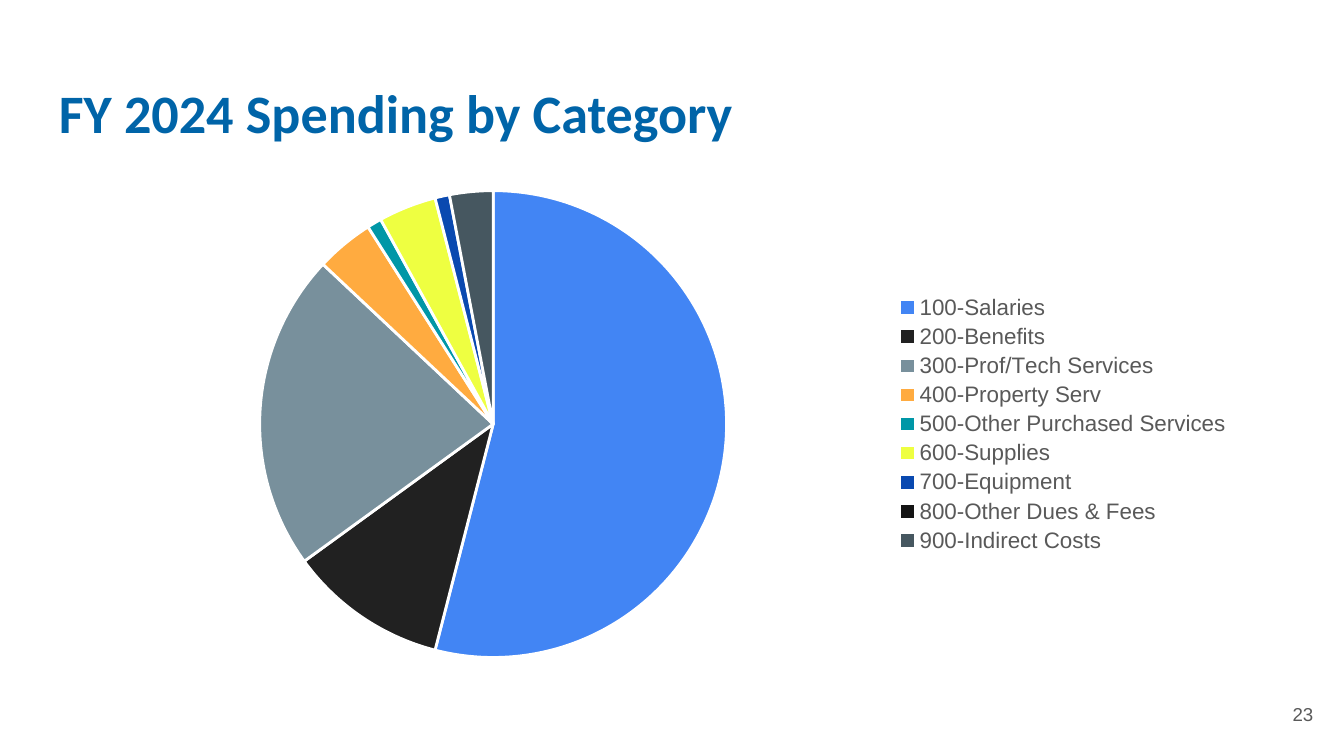
from pptx import Presentation
from pptx.chart.data import CategoryChartData
from pptx.dml.color import RGBColor
from pptx.enum.chart import XL_CHART_TYPE, XL_LEGEND_POSITION
from pptx.enum.text import MSO_ANCHOR, PP_ALIGN
from pptx.util import Pt

PIE = XL_CHART_TYPE.PIE
RIGHT = XL_LEGEND_POSITION.RIGHT
TOP, MIDDLE = MSO_ANCHOR.TOP, MSO_ANCHOR.MIDDLE
ALIGN_L, ALIGN_R = PP_ALIGN.LEFT, PP_ALIGN.RIGHT

BLUE = RGBColor(0x00, 0x64, 0xA8)
GREY = RGBColor(0x59, 0x59, 0x59)
WHITE = RGBColor(0xFF, 0xFF, 0xFF)
BLACK = RGBColor(0x00, 0x00, 0x00)

# Category, percent of spending, slice colour
SPENDING = [
    ("100-Salaries", 54, RGBColor(0x42, 0x85, 0xF4)),
    ("200-Benefits", 11, RGBColor(0x21, 0x21, 0x21)),
    ("300-Prof/Tech Services", 22, RGBColor(0x78, 0x90, 0x9C)),
    ("400-Property Serv", 4, RGBColor(0xFF, 0xAB, 0x40)),
    ("500-Other Purchased Services", 1, RGBColor(0x00, 0x97, 0xA7)),
    ("600-Supplies", 4, RGBColor(0xEE, 0xFF, 0x41)),
    ("700-Equipment", 1, RGBColor(0x0A, 0x49, 0xB0)),
    ("800-Other Dues & Fees", 0, RGBColor(0x14, 0x14, 0x14)),
    ("900-Indirect Costs", 3, RGBColor(0x46, 0x57, 0x60)),
]


def style(font, name, size, color, bold=False):
    font.name, font.size, font.bold = name, Pt(size), bold
    font.color.rgb = color


def add_text(slide, box, text, look, align=ALIGN_L, anchor=TOP):
    frame = slide.shapes.add_textbox(*map(Pt, box)).text_frame
    frame.word_wrap = True
    frame.vertical_anchor = anchor
    frame.margin_left = frame.margin_right = Pt(7.2)
    frame.margin_top = frame.margin_bottom = Pt(7.2)
    para = frame.paragraphs[0]
    para.alignment = align
    run = para.add_run()
    run.text = text
    style(run.font, *look)


def add_pie(slide, box):
    names, shares, colors = zip(*SPENDING)
    data = CategoryChartData()
    data.categories = names
    data.add_series("Series 1", shares)
    chart = slide.shapes.add_chart(PIE, *map(Pt, box), data).chart
    style(chart.font, "Arial", 10, BLACK)
    chart.has_title = False
    chart.has_legend = True
    chart.legend.position = RIGHT
    chart.legend.include_in_layout = False
    style(chart.legend.font, "Arial", 12, GREY)
    plot = chart.plots[0]
    plot.vary_by_categories = True
    for i, color in enumerate(colors):
        part = plot.series[0].points[i].format
        part.fill.solid()
        part.fill.fore_color.rgb = color
        part.line.color.rgb = WHITE
        part.line.width = Pt(1.5)


def main():
    deck = Presentation()
    deck.slide_width, deck.slide_height = Pt(720), Pt(405)
    slide = deck.slides.add_slide(deck.slide_layouts[6])
    add_text(slide, (24.5, 35.3, 671, 45.4), "FY 2024 Spending by Category",
             ("Calibri", 29, BLUE, True))
    add_text(slide, (667.4, 367.2, 43.2, 31), "23",
             ("Arial", 10, GREY), ALIGN_R, MIDDLE)
    add_pie(slide, (49.7, 92.2, 617, 270))
    deck.save("out.pptx")


if __name__ == "__main__":
    main()
